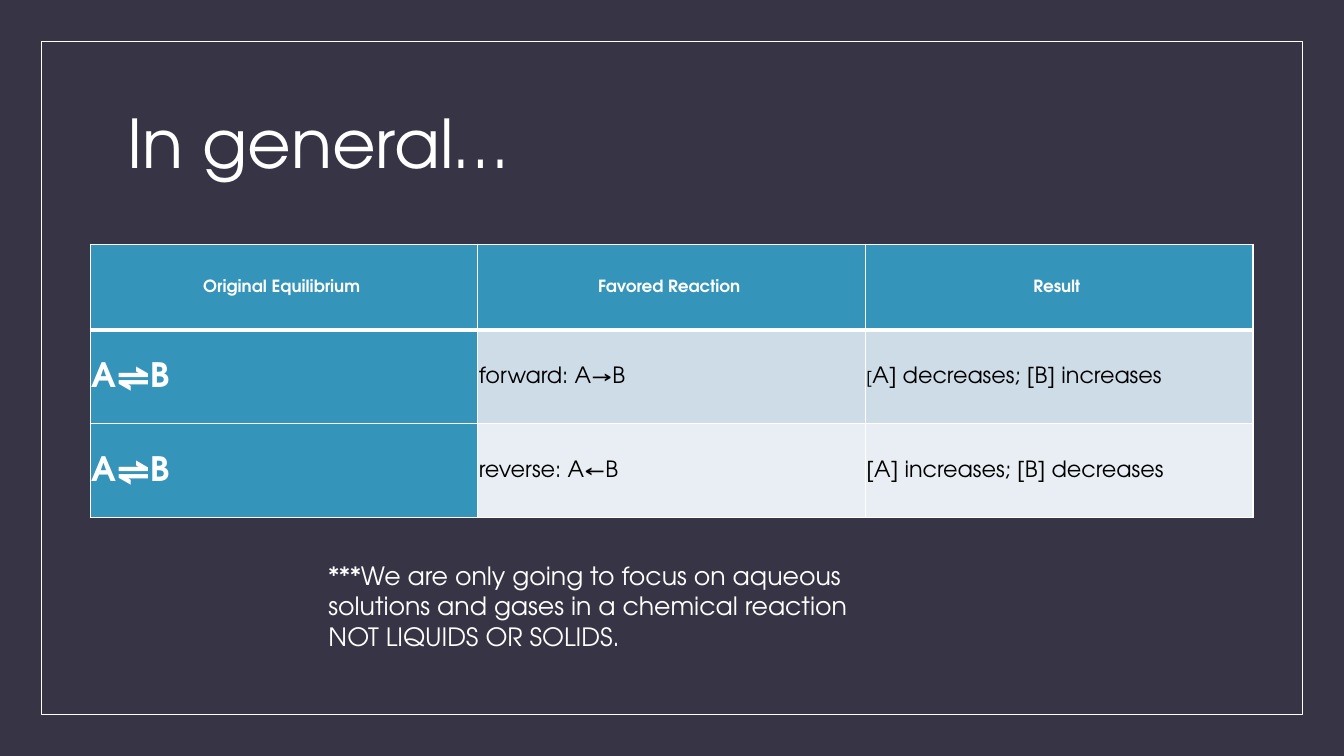
from lxml import etree
from pptx import Presentation
from pptx.dml.color import RGBColor
from pptx.enum.shapes import MSO_SHAPE
from pptx.enum.text import MSO_ANCHOR, PP_ALIGN
from pptx.oxml.ns import qn
from pptx.util import Pt

RECTANGLE = MSO_SHAPE.RECTANGLE
MIDDLE = MSO_ANCHOR.MIDDLE
LEFT, CENTER = PP_ALIGN.LEFT, PP_ALIGN.CENTER
FONT = "TeX Gyre Adventor"
WHITE, BLACK, NAVY, TEAL = "FFFFFF", "000000", "373545", "3494BA"
BANDS = ["CEDCE7", "E8EEF3"]

HEADINGS = ["Original Equilibrium ", "Favored Reaction ", "Result "]
REACTIONS = [
    ["A⇌B", "forward: A→B", "[A] decreases; [B] increases"],
    ["A⇌B", "reverse: A←B", "[A] increases; [B] decreases"],
]


def color(hex_string):
    return RGBColor.from_string(hex_string)


def set_font(font, size, hex_string=WHITE, bold=False):
    font.name, font.size, font.bold = FONT, Pt(size), bold
    font.color.rgb = color(hex_string)


def add_frame(slide, left, top, width, height):
    frame = slide.shapes.add_shape(RECTANGLE, Pt(left), Pt(top), Pt(width), Pt(height))
    frame.shadow.inherit = False
    frame.fill.background()
    frame.line.color.rgb = color(WHITE)
    frame.line.width = Pt(0.5)


def fill_title(slide, left, top, width, height):
    title = slide.shapes.title
    title.left, title.top, title.width, title.height = map(Pt, (left, top, width, height))
    title.text_frame.text = "In general…"
    title.text_frame.vertical_anchor = MIDDLE
    heading = title.text_frame.paragraphs[0]
    heading.alignment, heading.line_spacing = LEFT, 0.9
    set_font(heading.font, 48)


def set_borders(cell, **widths):
    properties = cell._tc.get_or_add_tcPr()
    for side in "LRTB":
        width = Pt(widths.get(side, 1))
        border = etree.SubElement(properties, qn(f"a:ln{side}"), w=str(width))
        fill = etree.SubElement(border, qn("a:solidFill"))
        etree.SubElement(fill, qn("a:srgbClr"), val=WHITE)


def fill_cell(cell, text, fill, size, text_color=WHITE, bold=False, align=LEFT, **borders):
    set_borders(cell, **borders)
    cell.fill.solid()
    cell.fill.fore_color.rgb = color(fill)
    cell.vertical_anchor = MIDDLE
    cell.margin_left = cell.margin_right = cell.margin_top = cell.margin_bottom = Pt(0.75)
    cell.text = text
    paragraph = cell.text_frame.paragraphs[0]
    paragraph.alignment, paragraph.line_spacing = align, 1.07
    set_font(paragraph.font, size, text_color, bold)
    return paragraph


def add_reaction_table(slide, left, top, width, header_height, row_height):
    height = header_height + row_height * len(REACTIONS)
    table = slide.shapes.add_table(len(REACTIONS) + 1, len(HEADINGS),
                                   Pt(left), Pt(top), Pt(width), Pt(height)).table
    table.rows[0].height = Pt(header_height)

    # Header row, with a heavy rule below
    for column, heading in enumerate(HEADINGS):
        fill_cell(table.cell(0, column), heading, TEAL, 12, bold=True, align=CENTER, B=3)

    # One row per favored reaction
    for row, (reaction, band) in enumerate(zip(REACTIONS, BANDS), start=1):
        table.rows[row].height = Pt(row_height)
        rule = 3 if row == 1 else 1
        equilibrium, favored, result = reaction
        fill_cell(table.cell(row, 0), equilibrium, TEAL, 24, bold=True, T=rule)
        fill_cell(table.cell(row, 1), favored, band, 16, BLACK, T=rule)
        outcome = fill_cell(table.cell(row, 2), result, band, 16, BLACK, T=rule)
        if row == 1:  # smaller opening bracket
            outcome.runs[0].text = result[0]
            outcome.runs[0].font.size = Pt(12)
            outcome.add_run().text = result[1:]


def add_note(slide, left, top, width, height):
    note = slide.shapes.add_textbox(Pt(left), Pt(top), Pt(width), Pt(height)).text_frame
    note.word_wrap = True
    note.text = ("***We are only going to focus on aqueous solutions and gases "
                 "in a chemical reaction NOT LIQUIDS OR SOLIDS.")
    set_font(note.paragraphs[0].font, 18)


def main():
    presentation = Presentation()
    presentation.slide_width, presentation.slide_height = Pt(960), Pt(540)
    slide = presentation.slides.add_slide(presentation.slide_layouts[5])
    slide.background.fill.solid()
    slide.background.fill.fore_color.rgb = color(NAVY)

    add_frame(slide, 29.5, 29.5, 901, 481)
    fill_title(slide, 84, 50.5, 792, 108)
    add_reaction_table(slide, 64.5, 174.5, 830.5, 61, 67.2)
    add_note(slide, 227.5, 396.7, 412, 72.7)
    presentation.save("out.pptx")


if __name__ == "__main__":
    main()
